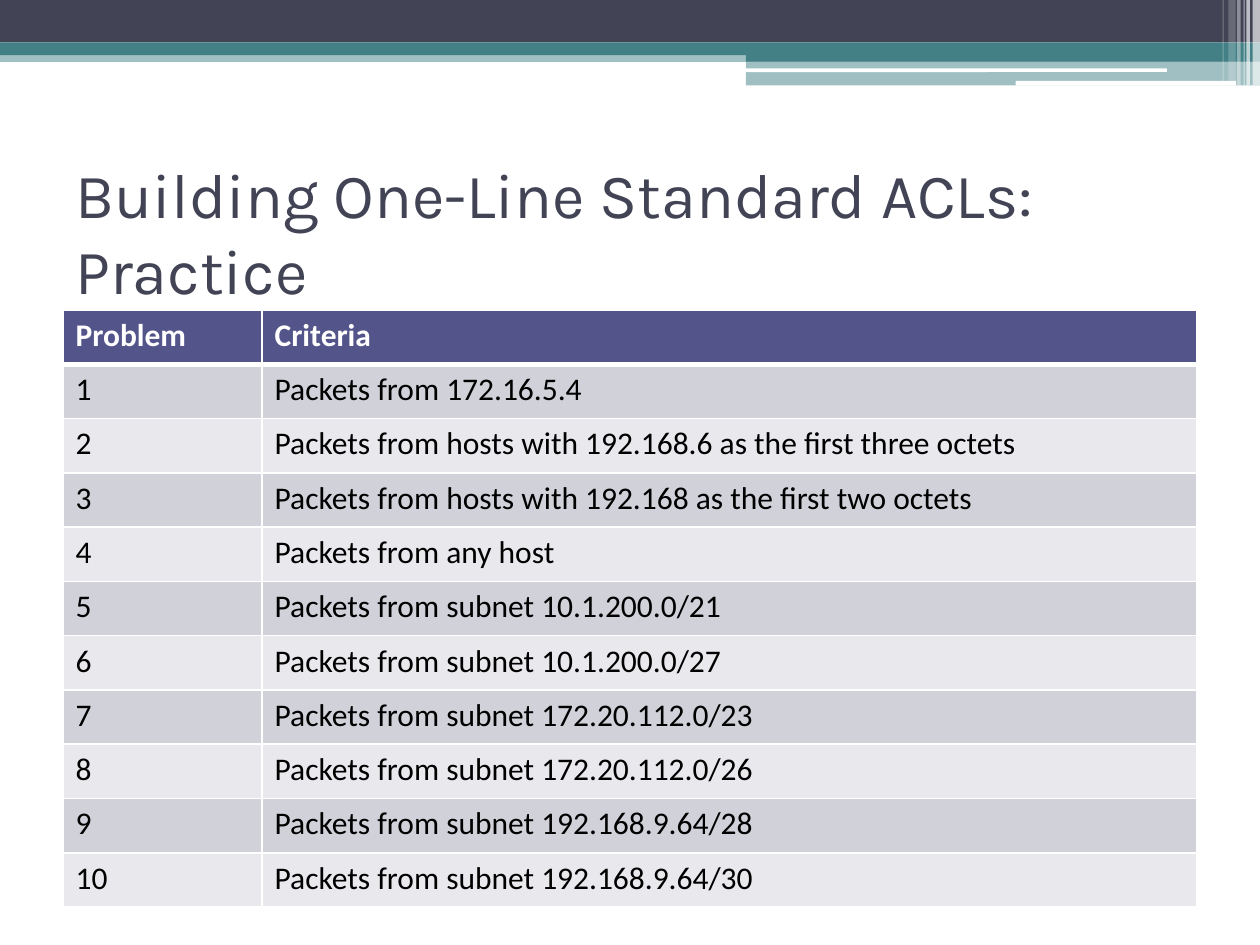
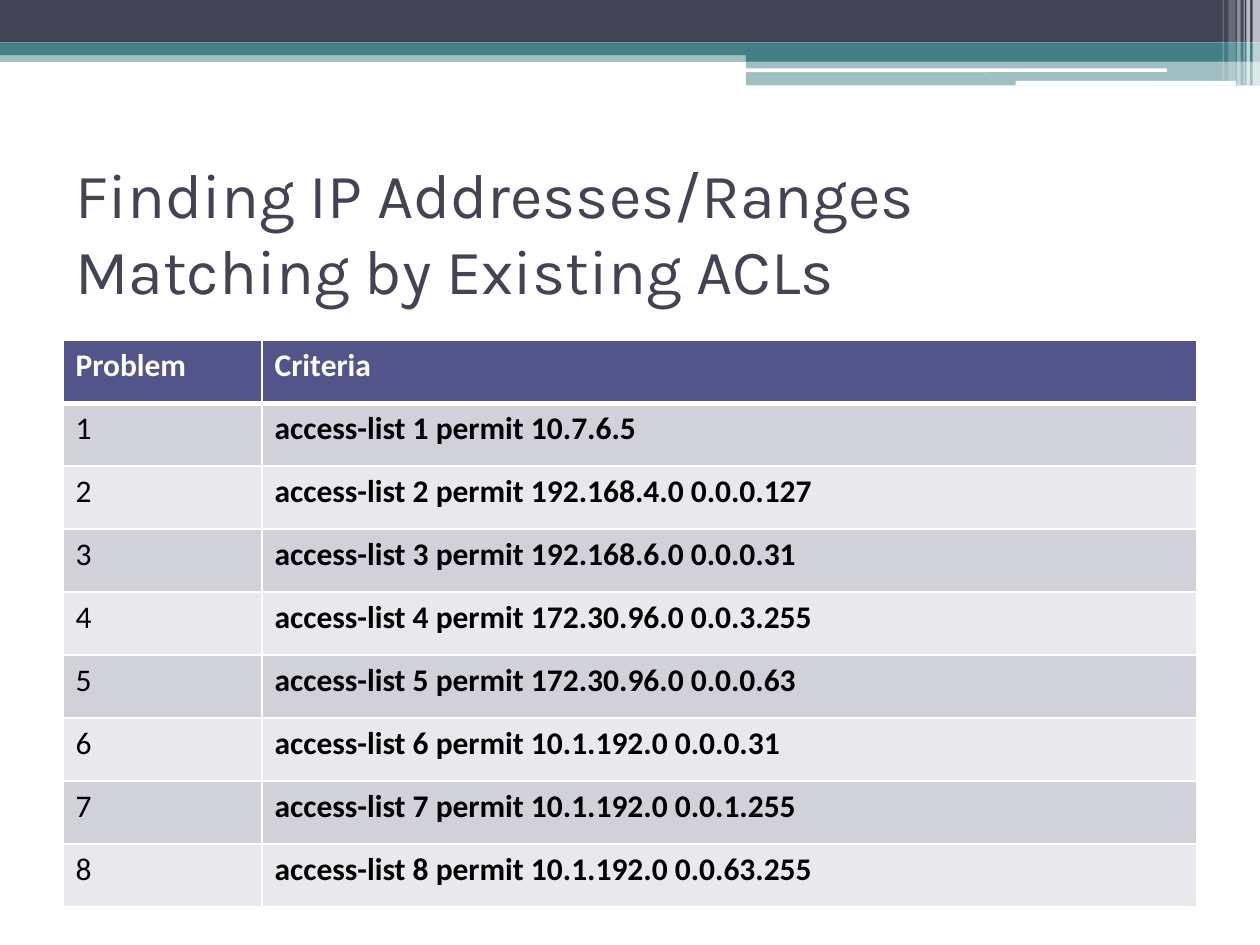
from lxml.etree import SubElement
from pptx import Presentation
from pptx.dml.color import RGBColor
from pptx.enum.shapes import MSO_SHAPE as Shape
from pptx.enum.text import MSO_ANCHOR as Anchor
from pptx.oxml.ns import qn
from pptx.util import Pt

# Content
HEADINGS = ("Problem", "Criteria")
SLIDES = [
    {
        "title": "Building One-Line Standard ACLs: Practice",
        "table_top": 177.2,
        "bold_criteria": False,
        "criteria": [
            "Packets from 172.16.5.4",
            "Packets from hosts with 192.168.6 as the first three octets",
            "Packets from hosts with 192.168 as the first two octets",
            "Packets from any host",
            "Packets from subnet 10.1.200.0/21",
            "Packets from subnet 10.1.200.0/27",
            "Packets from subnet 172.20.112.0/23",
            "Packets from subnet 172.20.112.0/26",
            "Packets from subnet 192.168.9.64/28",
            "Packets from subnet 192.168.9.64/30",
        ],
    },
    {
        "title": "Finding IP Addresses/Ranges Matching by Existing ACLs",
        "table_top": 194.4,
        "bold_criteria": True,
        "criteria": [
            "access-list 1 permit 10.7.6.5",
            "access-list 2 permit 192.168.4.0 0.0.0.127",
            "access-list 3 permit 192.168.6.0 0.0.0.31",
            "access-list 4 permit 172.30.96.0 0.0.3.255",
            "access-list 5 permit 172.30.96.0 0.0.0.63",
            "access-list 6 permit 10.1.192.0 0.0.0.31",
            "access-list 7 permit 10.1.192.0 0.0.1.255",
            "access-list 8 permit 10.1.192.0 0.0.63.255",
        ],
    },
]

# Shared look
COLORS = {
    "navy": "424456", "teal": "438086", "white": "FFFFFF", "black": "000000",
    "header": "53548A", "odd_row": "D1D1DA", "even_row": "E9E9ED",
}
WIDTH, HEIGHT = 720, 540
MARGIN = 36
CONTENT_WIDTH = WIDTH - 2 * MARGIN
TITLE_TOP, TITLE_HEIGHT = 90, 84
TABLE_BOTTOM = 518.4
COLUMN_WIDTHS = (113.76, CONTENT_WIDTH - 113.76)
TITLE_FONT = {"name": "Karla", "size": Pt(36)}
TABLE_FONT = {"name": "Calibri", "size": Pt(18)}

# Top bands, back to front: shape, left, top, width, height, colour, opacity %
STEP = 426.2
BANDS = [
    (Shape.RECTANGLE, 0, 28.8, WIDTH, 6.6, "teal", 50),
    (Shape.RECTANGLE, 0, 0, WIDTH, 24.3, "navy", 100),
    (Shape.RECTANGLE, 0, 24.3, WIDTH, 7.2, "teal", 100),
    (Shape.RECTANGLE, STEP, 28, WIDTH - STEP, 7.2, "teal", 100),
    (Shape.RECTANGLE, STEP, 35.2, WIDTH - STEP, 13.6, "teal", 50),
    (Shape.ROUNDED_RECTANGLE, 425.6, 39.1, 241.2, 2.1, "white", 100),
    (Shape.ROUNDED_RECTANGLE, 580.4, 46.2, 126, 2.7, "white", 100),
]
# Stripes at the right corner: left, width, height, opacity %
STRIPES = [
    (715.8, 4.2, 48.8, 65), (712.2, 2, 48.8, 65), (710.6, 0.7, 48.8, 60),
    (707, 2, 48.8, 40), (702, 4.2, 46.2, 20), (698.6, 0.7, 46.2, 30),
]
BANDS += [(Shape.RECTANGLE, left, 0, width, height, "white", opacity)
          for left, width, height, opacity in STRIPES]


def color(name):
    return RGBColor.from_string(COLORS[name])


def paint(target, name):
    target.fill.solid()
    target.fill.fore_color.rgb = color(name)


def write(text_frame, text, font_format, color_name, bold=False):
    run = text_frame.paragraphs[0].add_run()
    run.text = text
    for attribute, value in {**font_format, "bold": bold}.items():
        setattr(run.font, attribute, value)
    run.font.color.rgb = color(color_name)


def add_bands(slide):
    for kind, left, top, width, height, color_name, opacity in BANDS:
        shape = slide.shapes.add_shape(kind, Pt(left), Pt(top), Pt(width), Pt(height))
        shape.shadow.inherit = False
        shape.line.fill.background()
        paint(shape, color_name)
        if opacity < 100:
            fill_color = shape.fill._xPr.find(qn("a:solidFill"))[0]
            SubElement(fill_color, qn("a:alpha"), val=str(opacity * 1000))


def add_title(slide, text):
    box = slide.shapes.add_textbox(Pt(MARGIN), Pt(TITLE_TOP),
                                   Pt(CONTENT_WIDTH), Pt(TITLE_HEIGHT))
    box.text_frame.word_wrap = True
    box.text_frame.vertical_anchor = Anchor.MIDDLE
    write(box.text_frame, text, TITLE_FONT, "navy")


def add_borders(cell, row):
    widths = {"L": 1, "R": 1, "T": 3 if row == 1 else 1, "B": 3 if row == 0 else 1}
    properties = cell._tc.get_or_add_tcPr()
    for side, width in widths.items():
        line = SubElement(properties, qn(f"a:ln{side}"), w=str(Pt(width)))
        fill = SubElement(line, qn("a:solidFill"))
        SubElement(fill, qn("a:srgbClr"), val=COLORS["white"])


def add_problem_table(slide, criteria, top, bold_criteria):
    rows = [HEADINGS] + [(str(number), text) for number, text in enumerate(criteria, 1)]
    height = TABLE_BOTTOM - top
    table = slide.shapes.add_table(len(rows), len(HEADINGS), Pt(MARGIN), Pt(top),
                                   Pt(CONTENT_WIDTH), Pt(height)).table
    for column, width in zip(table.columns, COLUMN_WIDTHS):
        column.width = Pt(width)
    for row, texts in enumerate(rows):
        table.rows[row].height = Pt(height / len(rows))
        is_header = row == 0
        fill_name = "header" if is_header else "odd_row" if row % 2 else "even_row"
        for column, text in enumerate(texts):
            cell = table.cell(row, column)
            add_borders(cell, row)
            paint(cell, fill_name)
            write(cell.text_frame, text, TABLE_FONT, "white" if is_header else "black",
                  bold=is_header or (bold_criteria and column == 1))


def main():
    presentation = Presentation()
    presentation.slide_width, presentation.slide_height = Pt(WIDTH), Pt(HEIGHT)
    for content in SLIDES:
        slide = presentation.slides.add_slide(presentation.slide_layouts[6])
        paint(slide.background, "white")
        add_bands(slide)
        add_title(slide, content["title"])
        add_problem_table(slide, content["criteria"], content["table_top"],
                          content["bold_criteria"])
    presentation.save("out.pptx")


if __name__ == "__main__":
    main()
